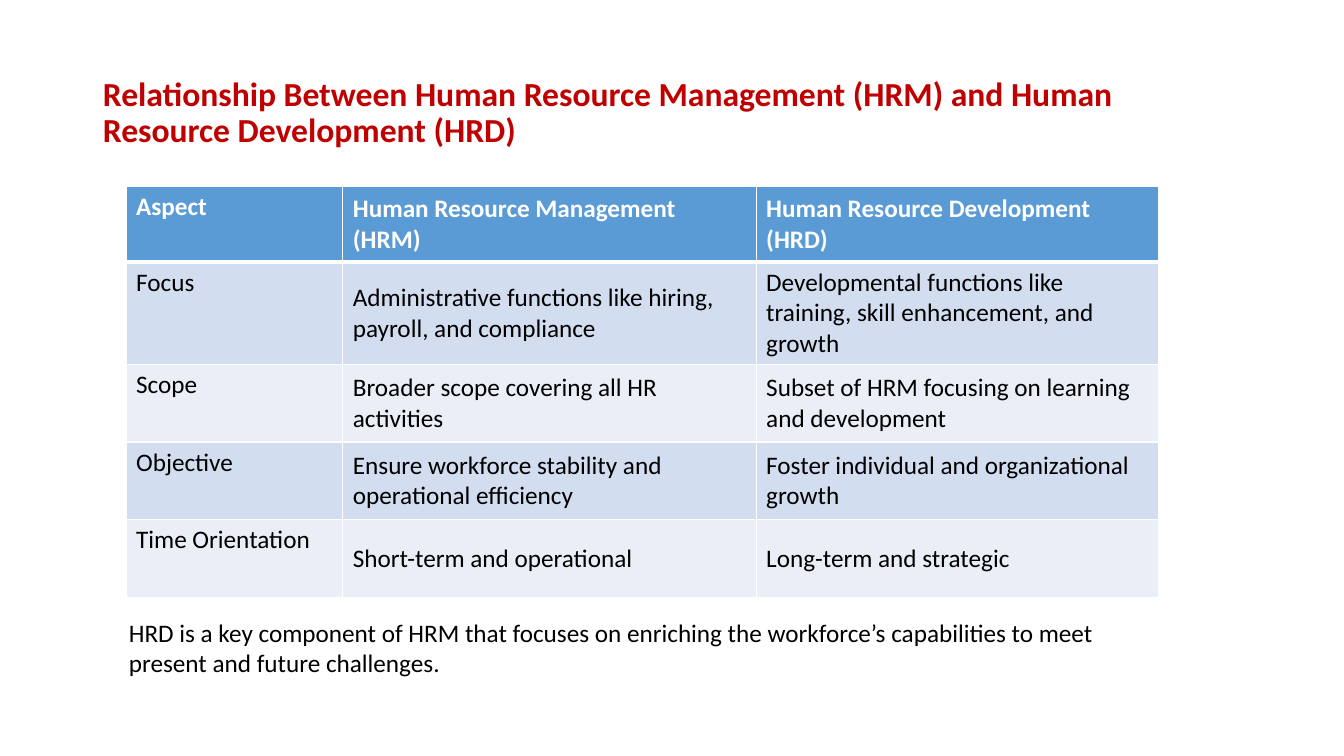
from dataclasses import dataclass

from lxml import etree
from pptx import Presentation
from pptx.dml.color import RGBColor
from pptx.enum import text
from pptx.oxml import ns
from pptx.util import Inches, Pt

TITLE = "Relationship Between Human Resource Management (HRM) and Human Resource Development (HRD)"
COMPARISON = [
    ("Aspect", "Human Resource Management (HRM)", "Human Resource Development (HRD)"),
    ("Focus", "Administrative functions like hiring, payroll, and compliance",
     "Developmental functions like training, skill enhancement, and growth"),
    ("Scope", "Broader scope covering all HR activities",
     "Subset of HRM focusing on learning and development"),
    ("Objective", "Ensure workforce stability and operational efficiency",
     "Foster individual and organizational growth"),
    ("Time Orientation", "Short-term and operational", "Long-term and strategic"),
]
SUMMARY = ("HRD is a key component of HRM that focuses on enriching the workforce’s "
           "capabilities to meet present and future challenges.")
COLUMN_WIDTHS = (2.15, 4.1, 3.99)
HEADER_HEIGHT, ROW_HEIGHT = 0.75, 0.77


@dataclass(frozen=True)
class Theme:
    font: str = "Calibri"
    title_size: int = 24
    body_size: int = 18
    title: str = "C00000"
    ink: str = "000000"
    white: str = "FFFFFF"
    header: str = "5B9BD5"
    bands: tuple = ("D2DEEF", "EAEFF7")
    rule: int = 1
    header_rule: int = 3


THEME = Theme()


def write(frame, content, size, color, bold=False):
    frame.word_wrap = True
    para = frame.paragraphs[0]
    para.text = content
    para.alignment = text.PP_ALIGN.LEFT
    para.font.name = THEME.font
    para.font.size = Pt(size)
    para.font.bold = bold
    para.font.color.rgb = RGBColor.from_string(color)
    return para


def set_borders(cell, widths):
    properties = cell._tc.get_or_add_tcPr()
    for position, (side, width) in enumerate(widths.items()):
        line = etree.Element(ns.qn(f"a:ln{side}"), w=str(Pt(width)))
        fill = etree.SubElement(line, ns.qn("a:solidFill"))
        etree.SubElement(fill, ns.qn("a:srgbClr"), val=THEME.white)
        properties.insert(position, line)


def add_comparison(page):
    height = HEADER_HEIGHT + ROW_HEIGHT * (len(COMPARISON) - 1)
    table = page.shapes.add_table(
        len(COMPARISON), len(COLUMN_WIDTHS), Inches(1.25), Inches(1.85),
        Inches(sum(COLUMN_WIDTHS)), Inches(height)).table
    for column, width in zip(table.columns, COLUMN_WIDTHS):
        column.width = Inches(width)
    for r, entries in enumerate(COMPARISON):
        is_header = r == 0
        table.rows[r].height = Inches(HEADER_HEIGHT if is_header else ROW_HEIGHT)
        background = THEME.header if is_header else THEME.bands[(r - 1) % 2]
        for c, entry in enumerate(entries):
            cell = table.cell(r, c)
            cell.fill.solid()
            cell.fill.fore_color.rgb = RGBColor.from_string(background)
            cell.vertical_anchor = text.MSO_ANCHOR.MIDDLE if c else text.MSO_ANCHOR.TOP
            write(cell.text_frame, entry, THEME.body_size,
                  THEME.white if is_header else THEME.ink, is_header)
            set_borders(cell, {
                "L": THEME.rule, "R": THEME.rule,
                "T": THEME.header_rule if r == 1 else THEME.rule,
                "B": THEME.header_rule if is_header else THEME.rule})


def main():
    deck = Presentation()
    deck.slide_width, deck.slide_height = Inches(13.33), Inches(7.5)
    page = deck.slides.add_slide(deck.slide_layouts.get_by_name("Title Only"))

    title = page.shapes.title
    title.left, title.top = Inches(0.92), Inches(0.4)
    title.width, title.height = Inches(11.5), Inches(1.45)
    title.text_frame.vertical_anchor = text.MSO_ANCHOR.MIDDLE
    write(title.text_frame, TITLE, THEME.title_size, THEME.title, True).line_spacing = 0.9

    add_comparison(page)

    summary = page.shapes.add_textbox(Inches(1.18), Inches(6.07), Inches(10.38), Inches(0.71))
    write(summary.text_frame, SUMMARY, THEME.body_size, THEME.ink)
    summary.text_frame.auto_size = text.MSO_AUTO_SIZE.SHAPE_TO_FIT_TEXT

    deck.save("out.pptx")


if __name__ == "__main__":
    main()
